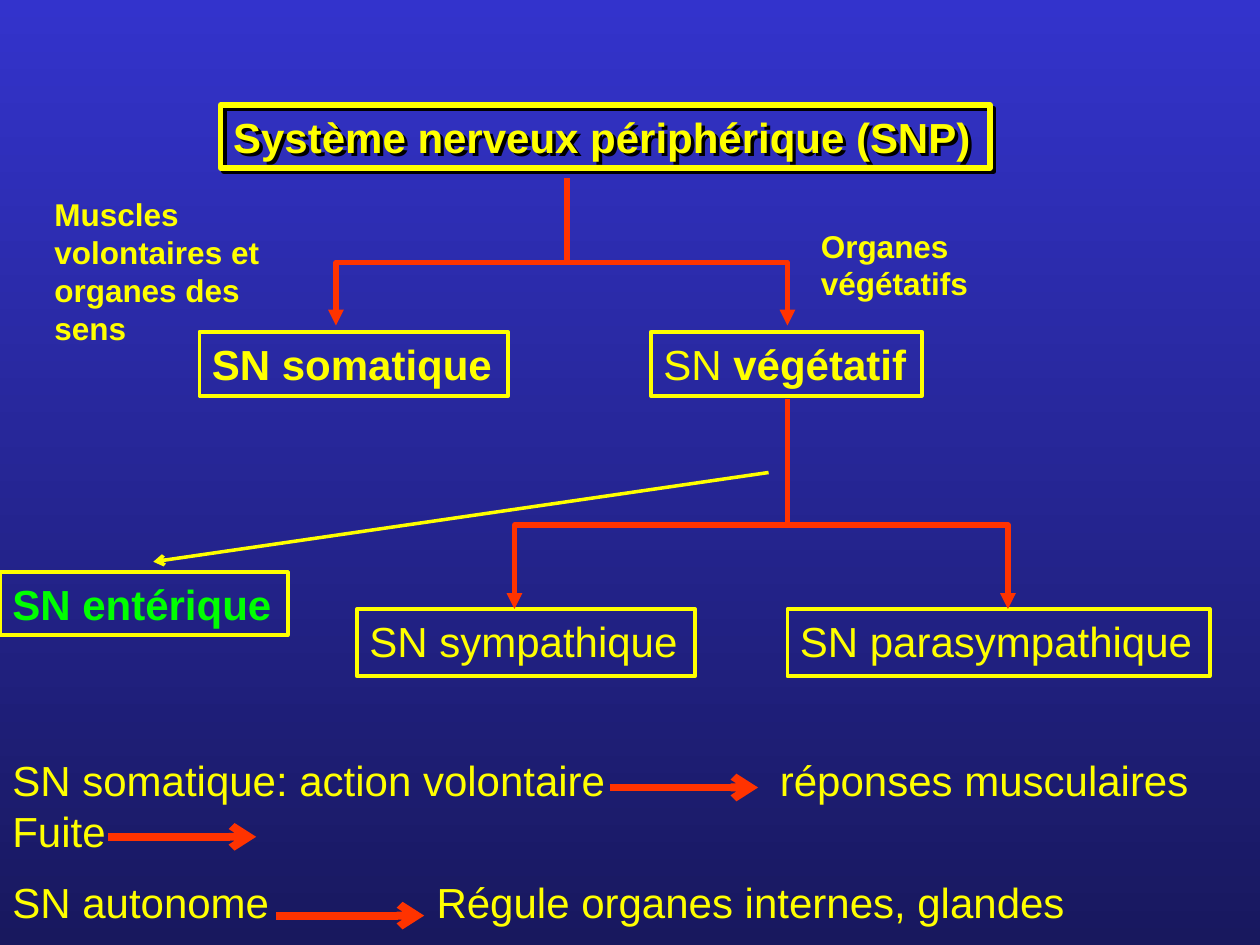
from lxml import etree
from pptx import Presentation, util as u
from pptx.dml.color import RGBColor
from pptx.enum import shapes, text
from pptx.oxml.ns import qn

PX = 7620  # EMU per px, 120 px to the inch
YELLOW, RED, GREEN, BLACK = "FFFF00", "FF3300", "00FF00", "000000"


def emu(*vals):
    return [v * PX for v in vals]


def rgb(code):
    return RGBColor.from_string(code)


def sub(node, tag, **attrs):
    return etree.SubElement(node, qn(tag), attrs)


def write(frame, paras, size=24, color=YELLOW, bold=False, wrap=True):
    """Fill a frame; each paragraph is a list of (text, bold) runs or a string."""
    frame.word_wrap = wrap
    frame.auto_size = text.MSO_AUTO_SIZE.NONE
    frame.vertical_anchor = text.MSO_ANCHOR.TOP
    for i, runs in enumerate(paras):
        par = frame.add_paragraph() if i else frame.paragraphs[0]
        par.alignment = text.PP_ALIGN.LEFT
        if i:
            par.space_before = u.Pt(size / 2)
        for words, heavy in [(runs, bold)] if isinstance(runs, str) else runs:
            for j, line in enumerate(words.split("\n")):
                if j:
                    par.add_line_break()
                run = par.add_run()
                run.text = line
                font = run.font
                font.name, font.size, font.bold = "Arial", u.Pt(size), heavy
                font.color.rgb = rgb(color)


class Sketch:
    """Holds the line style and the current slide."""

    def __init__(self, slide, width=3):
        self.slide, self.width = slide, width
        self.items = slide.shapes

    def back(self, top, low):
        fill = self.slide.background.fill
        fill.gradient()
        fill.gradient_angle = 270
        for stop, code, pos in zip(fill.gradient_stops, (top, low), (0, 1)):
            stop.color.rgb, stop.position = rgb(code), pos

    def stroke(self, shape, color, width=None, head=None, tail=None):
        shape.line.color.rgb = rgb(color)
        shape.line.width = u.Pt(width or self.width)
        ends = shape.line._get_or_add_ln()
        for tag, kind in (("a:headEnd", head), ("a:tailEnd", tail)):
            if kind:
                sub(ends, tag, type=kind)

    def title(self, words, *area):
        shape = self.items.title
        shape.left, shape.top, shape.width, shape.height = emu(*area)
        write(shape.text_frame, [words], bold=True)
        self.stroke(shape, YELLOW)
        effect = sub(shape._element.spPr, "a:effectLst")
        shade = sub(effect, "a:outerShdw", dist=str(u.Pt(2.8)), dir="2700000",
                    algn="ctr", rotWithShape="0")
        sub(shade, "a:srgbClr", val=BLACK)

    def box(self, words, *area, **form):
        shape = self.items.add_shape(shapes.MSO_SHAPE.RECTANGLE, *emu(*area))
        shape.shadow.inherit = False
        shape.fill.background()
        self.stroke(shape, YELLOW, 2.25)
        write(shape.text_frame, [words], **form)

    def label(self, paras, *area, **form):
        frame = self.items.add_textbox(*emu(*area)).text_frame
        write(frame, paras, **form)
        return frame

    def line(self, *ends, color=RED, width=None, tail=None):
        link = self.items.add_connector(
            shapes.MSO_CONNECTOR.STRAIGHT, *emu(*ends))
        self.stroke(link, color, width, tail=tail)
        sub(link._element.spPr, "a:effectLst")

    def fork(self, stem, start, left, right, top, low):
        """A stem down to a bar whose two ends drop as arrows."""
        path = self.items.build_freeform(left, low, scale=PX)
        path.add_line_segments(
            [(left, top), (right, top), (right, low)], close=False)
        shape = path.convert_to_shape()
        shape.shadow.inherit = False
        shape.fill.background()
        self.stroke(shape, RED, head="triangle", tail="triangle")
        self.line(stem, start, stem, top)


def tab(par, stop):
    """Set one left tab stop, in px from the text's left edge."""
    stops = sub(par._p.get_or_add_pPr(), "a:tabLst")
    sub(stops, "a:tab", pos=str(stop * PX), algn="l")


def main():
    deck = Presentation()
    deck.slide_width, deck.slide_height = emu(1200, 900)
    art = Sketch(deck.slides.add_slide(deck.slide_layouts[5]))
    art.back("3333CC", "18185E")
    art.title("Système nerveux périphérique (SNP)", 210, 100, 733, 60)

    art.box("SN sympathique", 340, 580, 322, 64)
    art.box("SN parasympathique", 750, 580, 402, 64)
    art.fork(750, 380, 490, 960, 500, 580)

    art.box("SN somatique", 190, 316, 294, 61, bold=True)
    art.box([("SN ", False), ("végétatif", True)], 620, 316, 258, 61)
    art.fork(540, 170, 320, 750, 250, 310)

    art.label(["Muscles volontaires et organes des sens"],
              40, 180, 250, 156, size=18, bold=True)
    art.label(["Organes végétatifs"], 770, 210, 250, 84, size=18, bold=True)

    notes = art.label(
        ["SN somatique: action volontaire\tréponses musculaires\nFuite",
         "SN autonome\tRégule organes internes, glandes"],
        0, 713, 1200, 181)
    for par, stop in zip(notes.paragraphs, (731, 404)):
        tab(par, stop)
    for left, top in ((581, 750), (103, 797), (263, 872)):
        art.line(left, top, left + 141, top, width=4.5, tail="arrow")

    art.line(732, 450, 146, 535, color=YELLOW, width=2, tail="arrow")
    art.box("SN entérique", 0, 545, 274, 60, color=GREEN, bold=True)
    deck.save("out.pptx")


if __name__ == "__main__":
    main()
